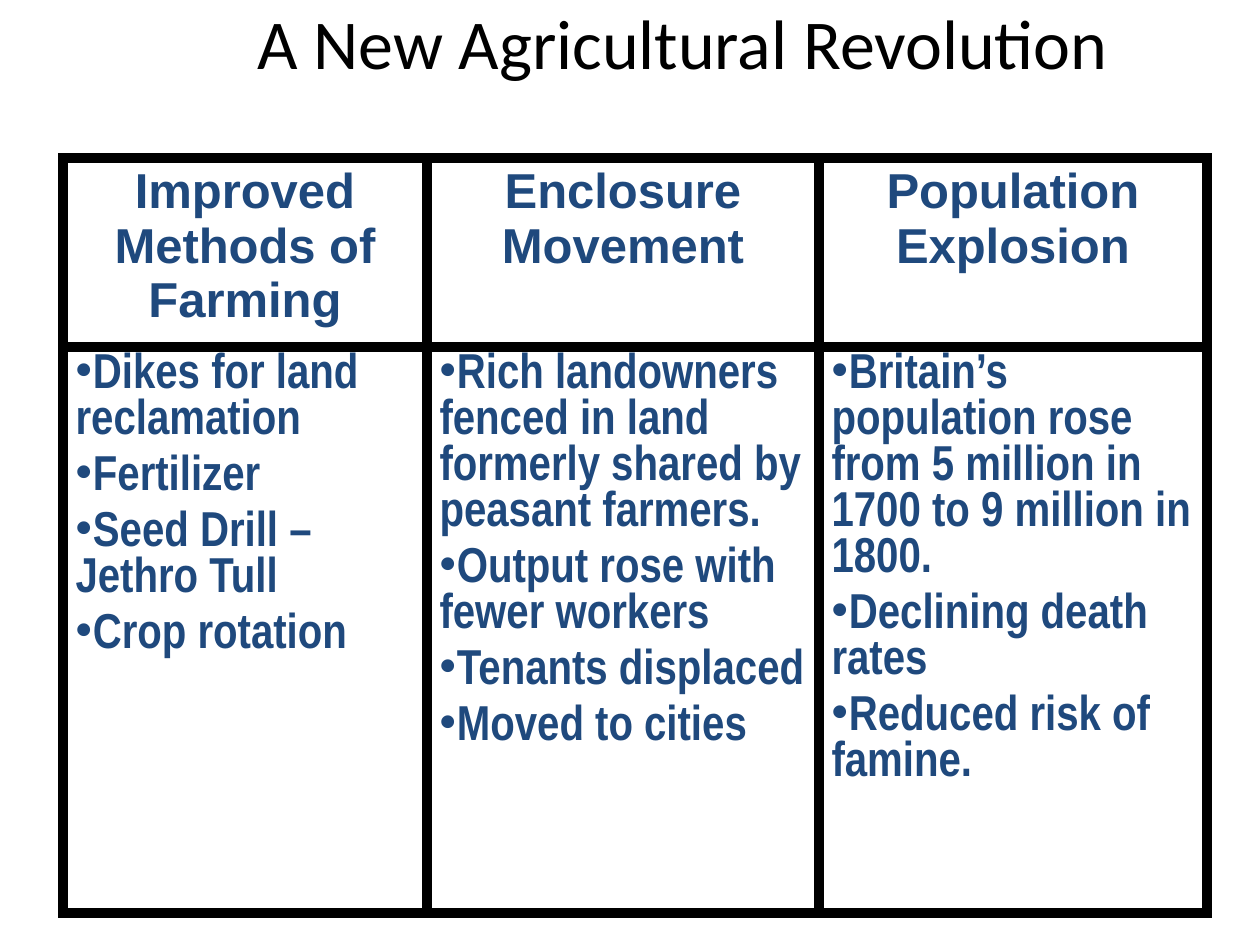
from lxml import etree
from pptx import Presentation
from pptx import util as u
from pptx.dml.color import RGBColor
from pptx.enum import text
from pptx.oxml.ns import qn

PX = u.Inches(1) // 126

COLUMNS = [
    (364, "Improved Methods of Farming",
     ["Dikes for land reclamation", "Fertilizer",
      "Seed Drill – Jethro Tull", "Crop rotation"]),
    (392, "Enclosure Movement",
     ["Rich landowners fenced in land formerly shared by peasant farmers.",
      "Output rose with fewer workers", "Tenants displaced",
      "Moved to cities"]),
    (388, "Population Explosion",
     ["Britain’s population rose from 5 million in 1700 to 9 million in 1800.",
      "Declining death rates", "Reduced risk of famine."]),
]
ROW_HEIGHTS = [189, 566]


def color(value):
    return RGBColor.from_string(value)


class SlideBuilder:
    ink, accent = "000000", "1F497D"
    border_width = u.Pt(6)

    def __init__(self, presentation):
        # Layout 5 is title-only
        self.slide = presentation.slides.add_slide(presentation.slide_layouts[5])

    def style(self, paragraph, font_name, size, hex_color, bold=False):
        font = paragraph.font
        font.name, font.size, font.bold = font_name, u.Pt(size), bold
        font.color.rgb = color(hex_color)

    def title(self, words, left, top, width, height):
        shape = self.slide.shapes.title
        shape.left, shape.top = left * PX, top * PX
        shape.width, shape.height = width * PX, height * PX
        frame = shape.text_frame
        frame.text = words
        frame.vertical_anchor = text.MSO_ANCHOR.TOP
        frame.margin_top = 0
        paragraph = frame.paragraphs[0]
        paragraph.alignment = text.PP_ALIGN.CENTER
        self.style(paragraph, "Calibri", 40, self.ink)

    def borders(self, cell):
        properties = cell._tc.get_or_add_tcPr()
        for position, side in enumerate(("lnL", "lnR", "lnT", "lnB")):
            line = etree.Element(qn(f"a:{side}"), w=str(self.border_width))
            fill = etree.SubElement(line, qn("a:solidFill"))
            etree.SubElement(fill, qn("a:srgbClr"), val=self.ink)
            properties.insert(position, line)

    def cell(self, cell, lines, font_name, bulleted):
        cell.fill.background()
        self.borders(cell)
        cell.text_frame.text = "\n".join(lines)
        for paragraph in cell.text_frame.paragraphs:
            paragraph.space_before = u.Pt(5.6)
            self.style(paragraph, font_name, 28, self.accent, bold=True)
            if bulleted:
                bullet = etree.Element(qn("a:buChar"), char="•")
                paragraph._p.pPr.insert_element_before(
                    bullet, "a:tabLst", "a:defRPr", "a:extLst")
            else:
                paragraph.alignment = text.PP_ALIGN.CENTER

    def table(self, columns, row_heights, left, top):
        width = sum(column[0] for column in columns)
        table = self.slide.shapes.add_table(
            len(row_heights), len(columns), left * PX, top * PX,
            width * PX, sum(row_heights) * PX).table
        for row, height in zip(table.rows, row_heights):
            row.height = height * PX
        for index, (column_width, heading, points) in enumerate(columns):
            table.columns[index].width = column_width * PX
            self.cell(table.cell(0, index), [heading], "Arial", False)
            self.cell(table.cell(1, index), points, "Arial Narrow", True)


def main():
    presentation = Presentation()
    presentation.slide_width = 1260 * PX
    presentation.slide_height = 945 * PX
    builder = SlideBuilder(presentation)

    # Title
    builder.title("A New Agricultural Revolution", 147, 0, 1071, 158)

    # Three developments, each with a heading and its points
    builder.table(COLUMNS, ROW_HEIGHTS, 63, 158)

    presentation.save("out.pptx")


if __name__ == "__main__":
    main()
